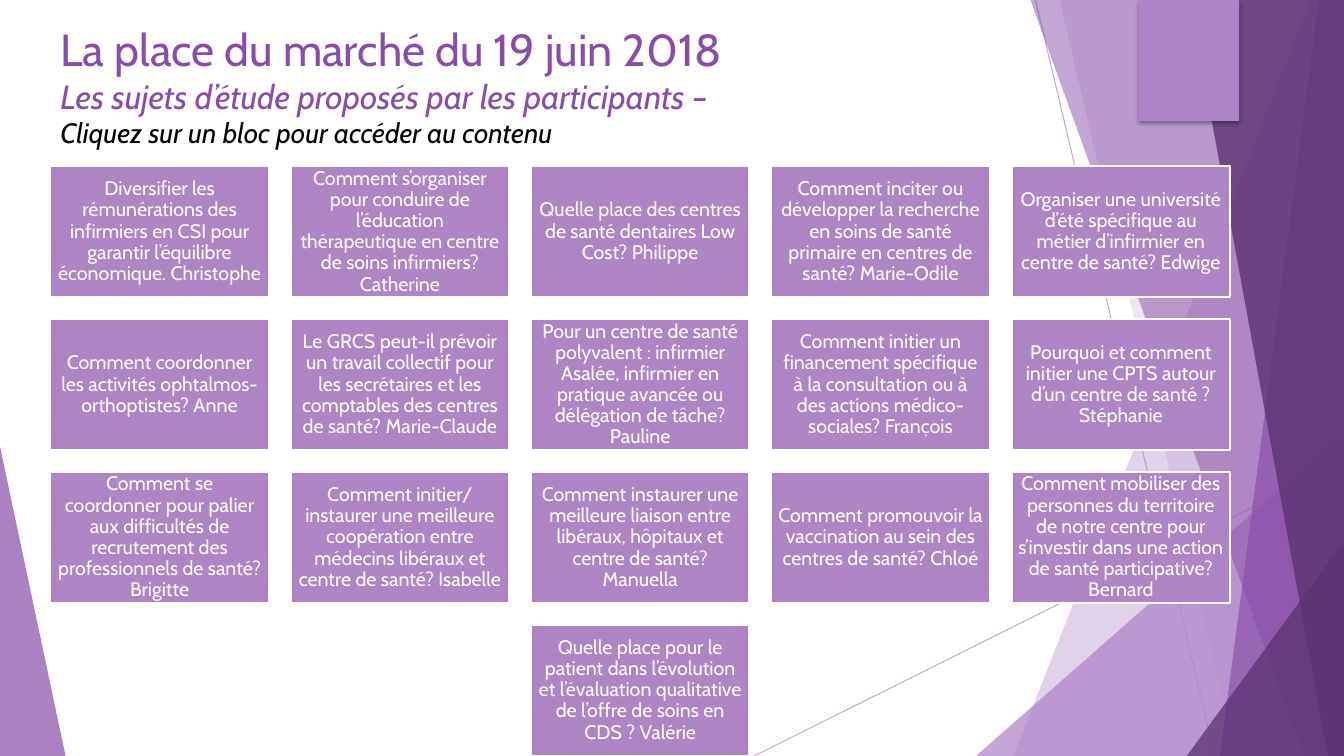
from copy import deepcopy

from lxml.etree import SubElement
from pptx import Presentation
from pptx.dml.color import RGBColor
from pptx.enum.shapes import MSO_CONNECTOR, MSO_SHAPE
from pptx.enum.text import MSO_ANCHOR, MSO_AUTO_SIZE, PP_ALIGN
from pptx.oxml import parse_xml
from pptx.oxml.ns import nsdecls, qn
from pptx.util import Inches, Pt

LILAC = RGBColor(0xAD, 0x84, 0xC6)
PURPLE = RGBColor(0x87, 0x4E, 0xA9)
PLUM = RGBColor(0x5A, 0x34, 0x71)
WHITE = RGBColor(0xFF, 0xFF, 0xFF)
BLACK = RGBColor(0x00, 0x00, 0x00)
FONT = "Cabin"

COLUMNS = 5
GRID_LEFT, GRID_TOP, GRID_WIDTH = 0.5, 1.65, 11.7
BLOCK_W = GRID_WIDTH / (COLUMNS + 0.1 * (COLUMNS - 1))
BLOCK_H = 0.6 * BLOCK_W
GAP = 0.1 * BLOCK_W

RAYS = [((7.48, 7.5), (13.33, 4.58)), ((10.27, 0), (12.05, 7.5))]
FACETS = [
    ([(13, 0), (10.05, 7.5), (13.33, 7.5), (13.33, 0)], LILAC, 36),
    ([(10.51, 0), (12.26, 7.5), (13.33, 7.5), (13.33, 0)], LILAC, 20),
    ([(9.68, 7.5), (13.33, 4.29), (13.33, 7.5)], LILAC, 72),
    ([(10.22, 0), (12.93, 7.5), (13.33, 7.5), (13.33, 0)], PURPLE, 50),
    ([(13.08, 0), (12.1, 7.5), (13.33, 7.5), (13.33, 0)], PURPLE, 66),
    ([(11.8, 0), (13.17, 7.5), (13.33, 7.5), (13.33, 0)], PLUM, 80),
    ([(11.77, 7.5), (13.33, 5.37), (13.33, 7.5)], PLUM, 76),
    ([(0, 4.43), (0.65, 7.5), (0, 7.5)], PURPLE, 70),
]

TITLE_LINES = [
    ("La place du marché du 19 juin 2018", 32, False, PURPLE),
    ("Les sujets d’étude proposés par les participants – ", 24, True, PURPLE),
    ("Cliquez sur un bloc pour accéder au contenu", 20, True, BLACK),
]

TOPICS = [
    "Diversifier les rémunérations des infirmiers en CSI pour garantir l’équilibre économique. Christophe",
    "Comment s’organiser pour conduire de l’éducation thérapeutique en centre de soins infirmiers? Catherine",
    "Quelle place des centres de santé dentaires Low Cost? Philippe",
    "Comment inciter ou développer la recherche en soins de santé primaire en centres de santé? Marie-Odile",
    "Organiser une université d’été spécifique au métier d’infirmier en centre de santé? Edwige",
    "Comment coordonner les activités ophtalmos-orthoptistes? Anne",
    "Le GRCS peut-il prévoir un travail collectif pour les secrétaires et les comptables des centres de santé? Marie-Claude",
    "Pour un centre de santé polyvalent : infirmier Asalée, infirmier en pratique avancée ou délégation de tâche? Pauline",
    "Comment initier un financement spécifique à la consultation ou à des actions médico-sociales? François",
    "Pourquoi et comment initier une CPTS autour d’un centre de santé ? Stéphanie",
    "Comment se coordonner pour palier aux difficultés de recrutement des professionnels de santé? Brigitte",
    "Comment initier/ instaurer une meilleure coopération entre médecins libéraux et centre de santé? Isabelle",
    "Comment instaurer une meilleure liaison entre libéraux, hôpitaux et centre de santé? Manuella",
    "Comment promouvoir la vaccination au sein des centres de santé? Chloé",
    "Comment mobiliser des personnes du territoire de notre centre pour s’investir dans une action de santé participative? Bernard",
    "Quelle place pour le patient dans l’évolution et l’évaluation qualitative de l’offre de soins en CDS ? Valérie",
]


def set_alpha(fill, percent):
    color = fill._xPr.find(qn("a:solidFill"))[0]
    SubElement(color, qn("a:alpha")).set("val", str(percent * 1000))


def add_ray(slide, start, end):
    line = slide.shapes.add_connector(
        MSO_CONNECTOR.STRAIGHT, *(Inches(v) for v in start + end))
    line.line.color.rgb = LILAC
    line.line.width = Pt(0.75)
    set_alpha(line.line.fill, 70)
    SubElement(line._element.spPr, qn("a:effectLst"))


def add_facet(slide, points, color, alpha):
    corners = [(Inches(x), Inches(y)) for x, y in points]
    builder = slide.shapes.build_freeform(*corners[0])
    builder.add_line_segments(corners[1:], close=True)
    sp = builder.convert_to_shape()
    sp.shadow.inherit = False
    sp.fill.solid()
    sp.fill.fore_color.rgb = color
    set_alpha(sp.fill, alpha)
    sp.line.fill.background()


def add_box(slide, left, top, width, height):
    sp = slide.shapes.add_shape(
        MSO_SHAPE.RECTANGLE, Inches(left), Inches(top), Inches(width), Inches(height))
    sp.shadow.inherit = False
    sp.fill.solid()
    sp.fill.fore_color.rgb = LILAC
    sp.line.fill.background()
    return sp


def add_tab(slide):
    sp = add_box(slide, 11.29, 0, 1, 1.2)
    effects = sp._element.spPr.find(qn("a:effectLst"))
    effects.append(parse_xml(
        f'<a:outerShdw {nsdecls("a")} blurRad="{Pt(3)}" dist="{Pt(2)}" dir="5400000" '
        'rotWithShape="0"><a:srgbClr val="000000"><a:alpha val="35000"/></a:srgbClr>'
        '</a:outerShdw>'))


def fill_title(title):
    title.left, title.top = Inches(0.5), Inches(0.13)
    title.width, title.height = Inches(9.26), Inches(1.44)
    tf = title.text_frame
    tf.word_wrap = True
    tf.auto_size = MSO_AUTO_SIZE.NONE
    tf.vertical_anchor = MSO_ANCHOR.MIDDLE
    p = tf.paragraphs[0]
    p.alignment = PP_ALIGN.LEFT
    for i, (text, size, italic, color) in enumerate(TITLE_LINES):
        if i:
            p.add_line_break()
            p._p[-1].append(deepcopy(r._r.rPr))
        r = p.add_run()
        r.text = text
        r.font.name = FONT
        r.font.size = Pt(size)
        r.font.italic = italic
        r.font.color.rgb = color


def add_topic(slide, text, left, top):
    sp = add_box(slide, left, top, BLOCK_W, BLOCK_H)
    sp.line.color.rgb = WHITE
    sp.line.width = Pt(1.5)
    tf = sp.text_frame
    tf.word_wrap = True
    tf.vertical_anchor = MSO_ANCHOR.MIDDLE
    tf.margin_left = tf.margin_right = Inches(0.06)
    tf.margin_top = tf.margin_bottom = Inches(0.06)
    p = tf.paragraphs[0]
    p.text = text
    p.alignment = PP_ALIGN.CENTER
    p.line_spacing = 0.9
    p.font.name = FONT
    p.font.size = Pt(14)
    p.font.color.rgb = WHITE


def add_topic_grid(slide):
    for first in range(0, len(TOPICS), COLUMNS):
        row = TOPICS[first:first + COLUMNS]
        indent = (COLUMNS - len(row)) / 2
        top = GRID_TOP + first // COLUMNS * (BLOCK_H + GAP)
        for column, text in enumerate(row):
            left = GRID_LEFT + (indent + column) * (BLOCK_W + GAP)
            add_topic(slide, text, left, top)


def main():
    prs = Presentation()
    prs.slide_width, prs.slide_height = Inches(13.33), Inches(7.5)
    slide = prs.slides.add_slide(prs.slide_layouts[5])
    for start, end in RAYS:
        add_ray(slide, start, end)
    for points, color, alpha in FACETS:
        add_facet(slide, points, color, alpha)
    add_tab(slide)
    fill_title(slide.shapes.title)
    add_topic_grid(slide)
    prs.save("out.pptx")


if __name__ == "__main__":
    main()
